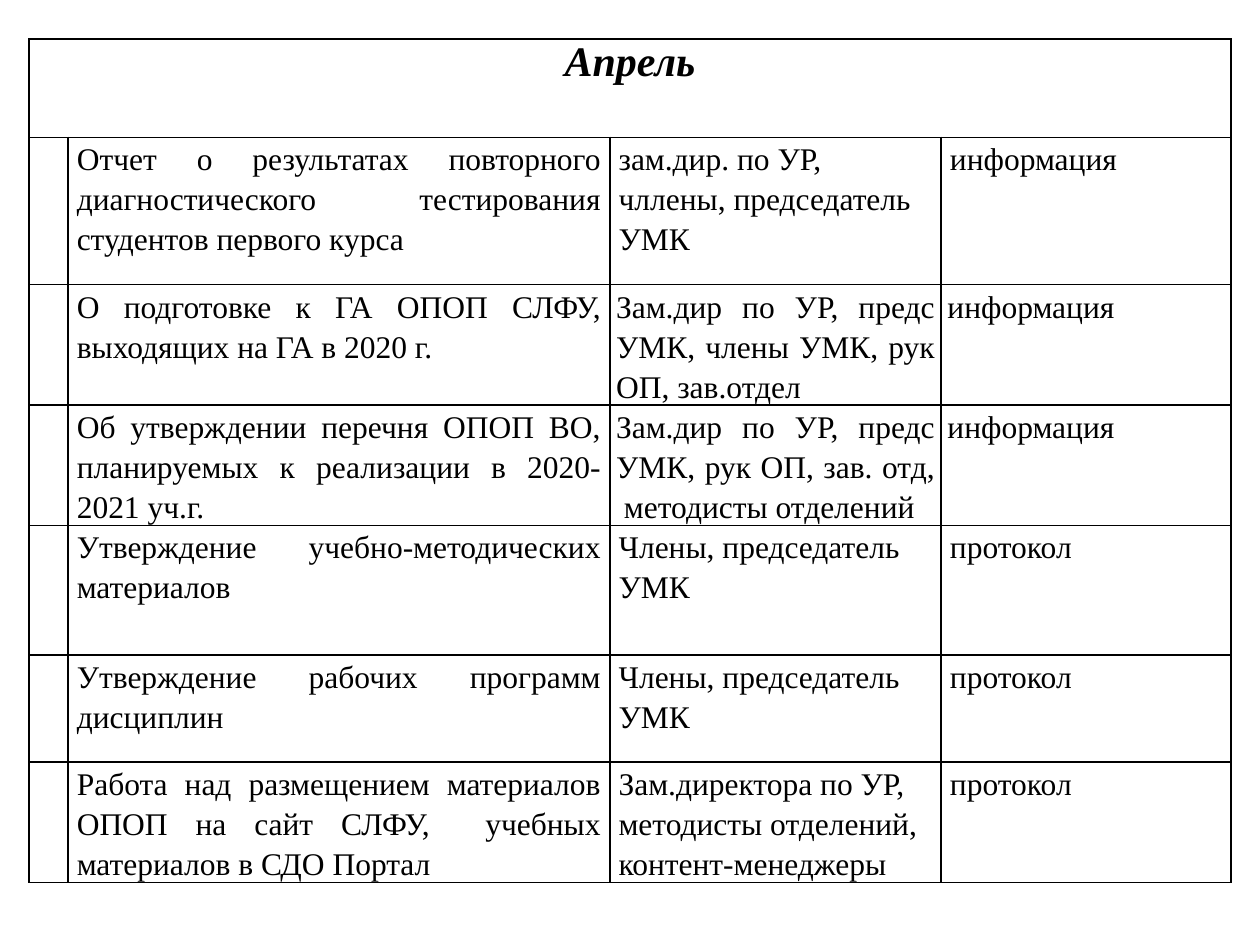
from lxml.etree import SubElement
from pptx import Presentation
from pptx.dml.color import RGBColor as Rgb
from pptx.enum.text import PP_ALIGN as Align
from pptx.oxml.ns import qn
from pptx.util import Inches, Pt

INK = {"text": "000000", "line": "000000"}
FONT = "Times New Roman"
COLS = [0.31, 4.3, 2.63, 2.3]
ROWS = [0.78, 1.17, 0.73, 0.63, 1.03, 0.85, 0.68]
WIDE, SLIM = 0.07, 0.05
LEFT, JUST = Align.LEFT, Align.JUSTIFY
PLAN = [
    ("Отчет о результатах повторного диагностического тестирования студентов первого курса",
     "зам.дир. по УР, чллены, председатель УМК", "информация", LEFT, WIDE),
    ("О подготовке к ГА ОПОП СЛФУ, выходящих на ГА в 2020 г.",
     "Зам.дир по УР, предс УМК, члены УМК, рук ОП, зав.отдел", "информация", JUST, SLIM),
    ("Об утверждении перечня ОПОП ВО, планируемых к реализации в 2020-2021 уч.г.",
     "Зам.дир по УР, предс УМК, рук ОП, зав. отд,  методисты отделений", "информация", JUST, SLIM),
    ("Утверждение учебно-методических материалов",
     "Члены, председатель УМК", "протокол", LEFT, WIDE),
    ("Утверждение рабочих программ дисциплин",
     "Члены, председатель УМК", "протокол", LEFT, WIDE),
    ("Работа над размещением материалов ОПОП на сайт СЛФУ,  учебных материалов в СДО Портал",
     "Зам.директора по УР, методисты отделений, контент-менеджеры", "протокол", LEFT, WIDE),
]


def frame(cell):
    """Give a cell black borders and no fill."""
    props = cell._tc.get_or_add_tcPr()
    for side in "LRTB":
        line = SubElement(props, qn(f"a:ln{side}"), w=str(Pt(1)))
        fill = SubElement(line, qn("a:solidFill"))
        SubElement(fill, qn("a:srgbClr"), val=INK["line"])
    cell.fill.background()


def write(cell, text, align, inset, size=18, space=1.15, strong=False):
    """Put one formatted run into a cell."""
    cell.margin_left = cell.margin_right = Inches(inset)
    cell.margin_top = cell.margin_bottom = 0
    para = cell.text_frame.paragraphs[0]
    para.alignment = align
    para.line_spacing = space
    run = para.add_run()
    run.text = text
    font = run.font
    font.name, font.size = FONT, Pt(size)
    font.bold = font.italic = strong
    font.color.rgb = Rgb.from_string(INK["text"])


def add_grid(slide):
    """Add the empty framed table with its merged month row."""
    shape = slide.shapes.add_table(len(ROWS), len(COLS), Inches(0.23),
                                   Inches(0.31), Inches(9.53), Inches(6.87))
    grid = shape.table
    grid.first_row = grid.horz_banding = False
    for col, width in zip(grid.columns, COLS):
        col.width = Inches(width)
    for row, height in zip(grid.rows, ROWS):
        row.height = Inches(height)
    shape.height = Inches(6.87)
    for cell in grid.iter_cells():
        frame(cell)
    grid.cell(0, 0).merge(grid.cell(0, len(COLS) - 1))
    return grid


def main():
    """Build the April plan slide."""
    deck = Presentation()
    deck.slide_width, deck.slide_height = Inches(10), Inches(7.5)
    slide = deck.slides.add_slide(deck.slide_layouts[6])
    grid = add_grid(slide)
    write(grid.cell(0, 0), "Апрель", Align.CENTER, SLIM, 24, 1.0, True)
    for row, (task, staff, form, align, inset) in enumerate(PLAN, 1):
        write(grid.cell(row, 1), task, JUST, WIDE)
        write(grid.cell(row, 2), staff, align, inset)
        write(grid.cell(row, 3), form, JUST, inset)
    deck.save("out.pptx")


if __name__ == "__main__":
    main()
